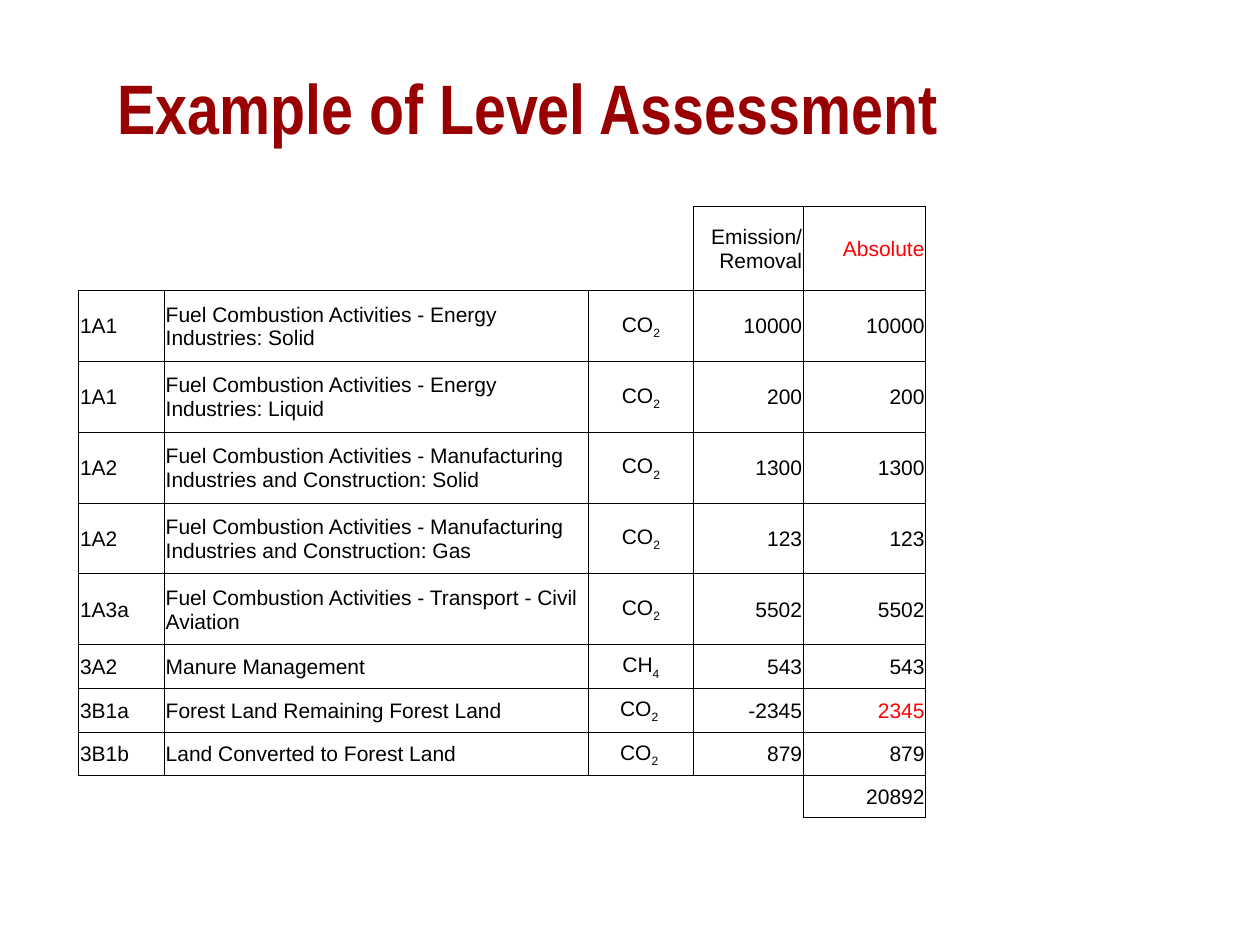
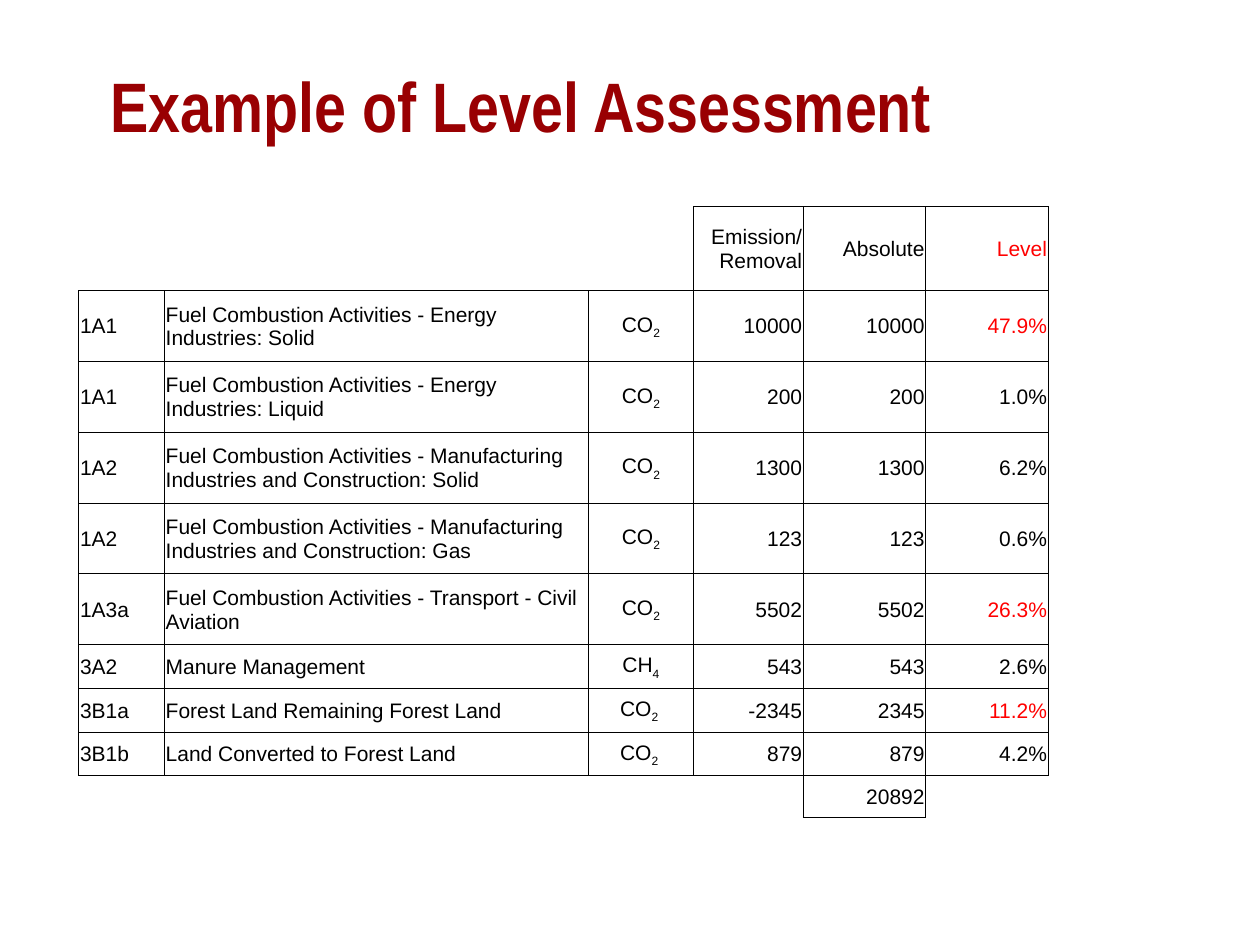
"""Build two slides that work through a level assessment of emission sources."""
from dataclasses import dataclass
from typing import Optional

import lxml.etree
import pptx
import pptx.dml.color
import pptx.enum.text
import pptx.oxml.ns
import pptx.util

Pt = pptx.util.Pt
RGBColor = pptx.dml.color.RGBColor
ALIGN = pptx.enum.text.PP_ALIGN
MIDDLE = pptx.enum.text.MSO_ANCHOR.MIDDLE
qn = pptx.oxml.ns.qn

DARK_RED = RGBColor(0x99, 0x00, 0x02)
RED = RGBColor(0xFF, 0x00, 0x00)
BLACK = RGBColor(0x00, 0x00, 0x00)

TITLE = "Example of Level Assessment"
TABLE_LEFT, TABLE_TOP = 45, 118
COL_WIDTHS = [49, 242.3, 60, 62.8, 70, 70]
ROW_HEIGHTS = [48] + [40.5] * 5 + [25] * 3 + [23.5]
INSET = 0.72
KEY_LEVEL = 0.1


@dataclass
class Source:
    """One emission source or sink, with its gas split into symbol and subscript."""
    code: str
    category: str
    gas: str
    subscript: str
    emission: int


@dataclass
class Entry:
    """The content of one filled table cell."""
    text: str
    align: ALIGN = ALIGN.RIGHT
    color: RGBColor = BLACK
    subscript: str = ""


Grid = list[list[Optional[Entry]]]

SOURCES = [
    Source("1A1", "Fuel Combustion Activities - Energy Industries: Solid", "CO", "2", 10000),
    Source("1A1", "Fuel Combustion Activities - Energy Industries: Liquid", "CO", "2", 200),
    Source("1A2", "Fuel Combustion Activities - Manufacturing Industries and Construction: Solid",
           "CO", "2", 1300),
    Source("1A2", "Fuel Combustion Activities - Manufacturing Industries and Construction: Gas",
           "CO", "2", 123),
    Source("1A3a", "Fuel Combustion Activities - Transport - Civil Aviation", "CO", "2", 5502),
    Source("3A2", "Manure Management", "CH", "4", 543),
    Source("3B1a", "Forest Land Remaining Forest Land", "CO", "2 ", -2345),
    Source("3B1b", "Land Converted to Forest Land", "CO", "2 ", 879),
]
TOTAL = sum(abs(source.emission) for source in SOURCES)


def red_if(condition: bool) -> RGBColor:
    """Return the highlight colour when the condition holds."""
    return RED if condition else BLACK


def assessment_grid(with_level: bool) -> Grid:
    """Lay out the header, source and total rows, with None for open cells."""
    header = [None, None, None, Entry("Emission/ Removal"),
              Entry("Absolute", color=red_if(not with_level))]
    total = [None, None, None, None, Entry(str(TOTAL))]
    if with_level:
        header.append(Entry("Level", color=RED))
        total.append(None)
    grid = [header]
    for source in SOURCES:
        absolute = abs(source.emission)
        row = [
            Entry(source.code, ALIGN.LEFT),
            Entry(source.category, ALIGN.LEFT),
            Entry(source.gas, ALIGN.CENTER, subscript=source.subscript),
            Entry(str(source.emission)),
            Entry(str(absolute), color=red_if(source.emission < 0 and not with_level)),
        ]
        if with_level:
            level = absolute / TOTAL
            row.append(Entry(f"{level:.1%}", color=red_if(level > KEY_LEVEL)))
        grid.append(row)
    return grid + [total]


def add_run(p, text: str, font: str, size: float, color: RGBColor, bold: bool = False):
    """Append one styled run to a paragraph."""
    r = p.add_run()
    r.text = text
    r.font.name = font
    r.font.size = Pt(size)
    r.font.bold = bold
    r.font.color.rgb = color
    return r


def add_title(s, left: float, top: float) -> None:
    """Add the slide title at the given position."""
    tf = s.shapes.add_textbox(Pt(left), Pt(top), Pt(623.5), Pt(79)).text_frame
    tf.word_wrap = True
    tf.vertical_anchor = MIDDLE
    add_run(tf.paragraphs[0], TITLE, "Arial Narrow", 40, DARK_RED, True)


def is_filled(grid: Grid, row: int, col: int) -> bool:
    """Tell whether a position lies in the grid and holds an entry."""
    return (0 <= row < len(grid) and 0 <= col < len(grid[0])
            and grid[row][col] is not None)


def set_borders(cell, grid: Grid, row: int, col: int) -> None:
    """Rule each side of a cell that touches a filled cell."""
    tc_pr = cell._tc.get_or_add_tcPr()
    sides = {"a:lnL": (0, -1), "a:lnR": (0, 1), "a:lnT": (-1, 0), "a:lnB": (1, 0)}
    for tag, (down, across) in sides.items():
        ln = lxml.etree.SubElement(tc_pr, qn(tag), w=str(Pt(0.5)))
        if is_filled(grid, row, col) or is_filled(grid, row + down, col + across):
            fill = lxml.etree.SubElement(ln, qn("a:solidFill"))
            lxml.etree.SubElement(fill, qn("a:srgbClr"), val=str(BLACK))
        else:
            lxml.etree.SubElement(ln, qn("a:noFill"))


def fill_cell(cell, entry: Optional[Entry]) -> None:
    """Set the insets of a cell and write its entry, if any."""
    cell.margin_left = cell.margin_right = cell.margin_top = Pt(INSET)
    cell.margin_bottom = Pt(0)
    cell.vertical_anchor = MIDDLE
    cell.fill.background()
    if entry is None:
        return
    p = cell.text_frame.paragraphs[0]
    p.alignment = entry.align
    add_run(p, entry.text, "Arial", 12, entry.color)
    if entry.subscript:
        r = add_run(p, entry.subscript, "Arial", 12, entry.color)
        r.font._element.set("baseline", "-25000")


def add_assessment_table(s, grid: Grid) -> None:
    """Draw the grid as a ruled table."""
    widths = COL_WIDTHS[:len(grid[0])]
    frame = s.shapes.add_table(len(grid), len(widths), Pt(TABLE_LEFT), Pt(TABLE_TOP),
                               Pt(sum(widths)), Pt(sum(ROW_HEIGHTS)))
    table = frame.table
    table.first_row = table.horz_banding = False
    for column, width in zip(table.columns, widths):
        column.width = Pt(width)
    for i, (entries, height) in enumerate(zip(grid, ROW_HEIGHTS)):
        table.rows[i].height = Pt(height)
        for j, entry in enumerate(entries):
            cell = table.cell(i, j)
            set_borders(cell, grid, i, j)
            fill_cell(cell, entry)


def main() -> None:
    """Build and save the presentation."""
    prs = pptx.Presentation()
    prs.slide_width, prs.slide_height = Pt(720), Pt(540)
    for with_level, left, top in [(False, 60, 21.5), (True, 56.25, 20.25)]:
        s = prs.slides.add_slide(prs.slide_layouts[6])
        add_title(s, left, top)
        add_assessment_table(s, assessment_grid(with_level))
    prs.save("out.pptx")


if __name__ == "__main__":
    main()
